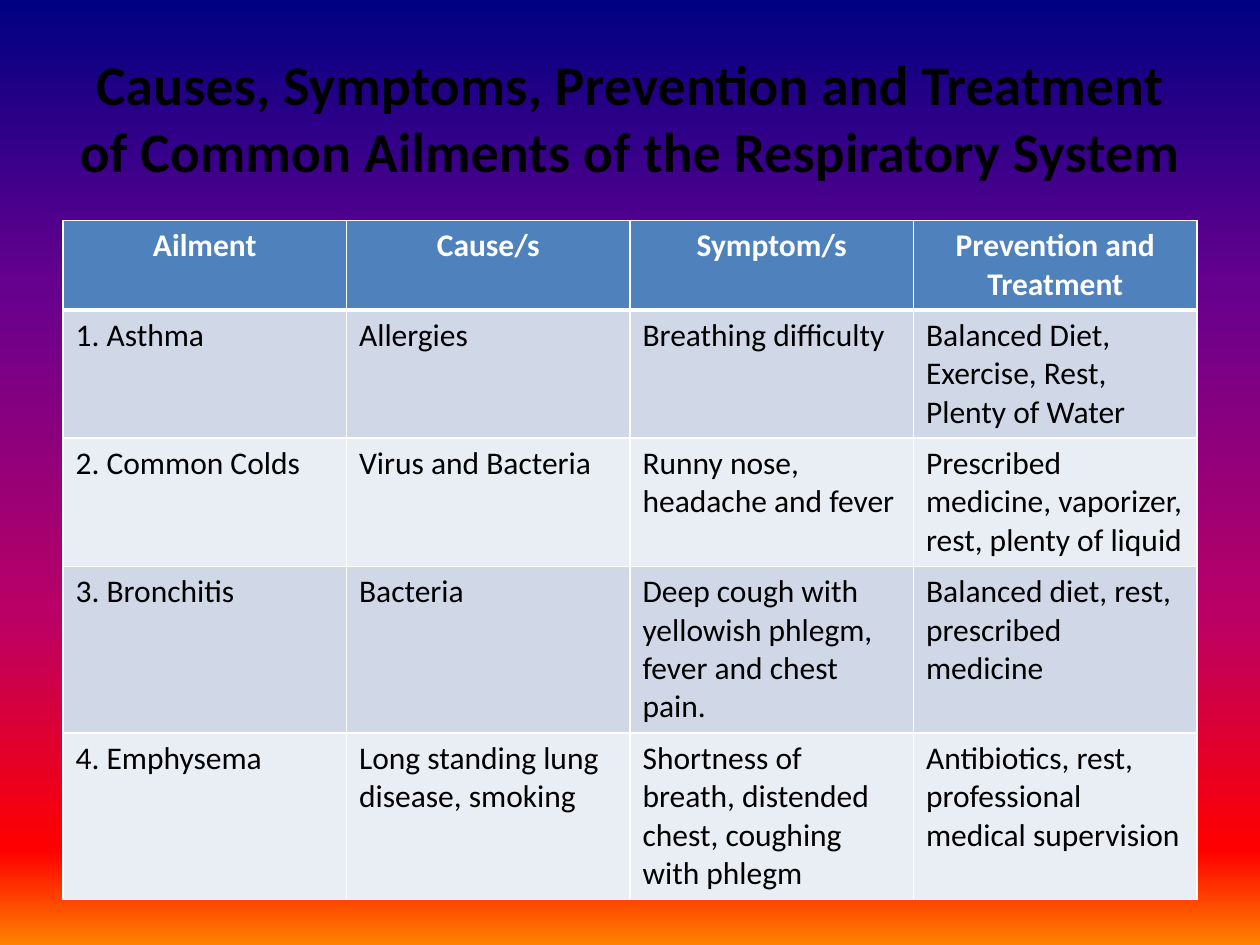
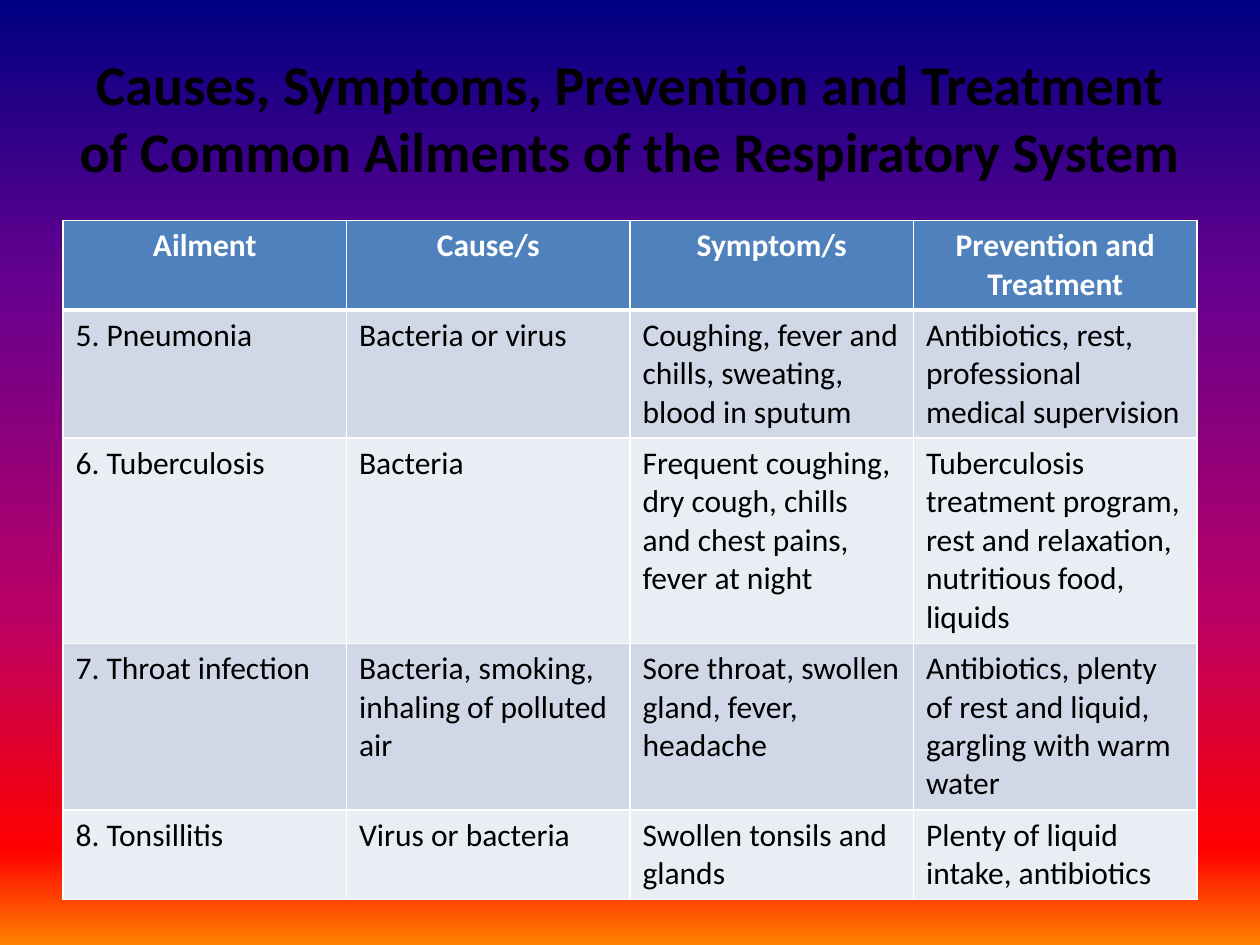
from lxml.etree import SubElement as Sub
from pptx import Presentation
from pptx.dml.color import RGBColor as Rgb
from pptx.enum.text import MSO_ANCHOR as Anchor, PP_ALIGN as Align
from pptx.oxml.ns import qn
from pptx.util import Pt

TITLE = ("Causes, Symptoms, Prevention and Treatment "
         "of Common Ailments of the Respiratory System")
HEADS = ("Ailment", "Cause/s", "Symptom/s", "Prevention and Treatment")
PAGES = [
    [
        ("1. Asthma", "Allergies", "Breathing difficulty",
         "Balanced Diet, Exercise, Rest, Plenty of Water"),
        ("2. Common Colds", "Virus and Bacteria",
         "Runny nose, headache and fever",
         "Prescribed medicine, vaporizer, rest, plenty of liquid"),
        ("3. Bronchitis", "Bacteria",
         "Deep cough with yellowish phlegm, fever and chest pain.",
         "Balanced diet, rest, prescribed medicine"),
        ("4. Emphysema", "Long standing lung disease, smoking",
         "Shortness of breath, distended chest, coughing with phlegm",
         "Antibiotics, rest, professional medical supervision"),
    ],
    [
        ("5. Pneumonia", "Bacteria or virus",
         "Coughing, fever and chills, sweating, blood in sputum",
         "Antibiotics, rest, professional medical supervision"),
        ("6. Tuberculosis", "Bacteria",
         "Frequent coughing, dry cough, chills and chest pains, fever at night",
         "Tuberculosis treatment program, rest and relaxation, "
         "nutritious food, liquids"),
        ("7. Throat infection", "Bacteria, smoking, inhaling of polluted air",
         "Sore throat, swollen gland, fever, headache",
         "Antibiotics, plenty of rest and liquid, gargling with warm water"),
        ("8. Tonsillitis", "Virus or bacteria", "Swollen tonsils and glands",
         "Plenty of liquid intake, antibiotics"),
    ],
]
LINES = [(2, 3, 3, 4, 4), (2, 3, 5, 4, 2)]

HUES = {"text": "000000", "edge": "FFFFFF", "head": "4F81BD",
        "odd": "D0D8E8", "even": "E9EDF4"}
SKY = [(0, "000082"), (30, "66008F"), (65, "BA0066"),
       (90, "FF0000"), (100, "FF8200")]
FONT = "Calibri"
LEFT, WIDTH = 36, 648
TOP, LINE, PAD = 126, 22, 7.2


def paint(master):
    fill = master.background.fill
    fill.gradient()
    fill.gradient_angle = 270
    stops = master.element.find(".//" + qn("a:gsLst"))
    stops.clear()
    for pos, hue in SKY:
        stop = Sub(stops, qn("a:gs"), pos=str(pos * 1000))
        Sub(stop, qn("a:srgbClr"), val=hue)


def style(para, size, hue, bold, align):
    para.alignment = align
    font = para.font
    font.name, font.size, font.bold = FONT, Pt(size), bold
    font.color.rgb = Rgb.from_string(HUES[hue])


def edge(cell, side, width):
    line = Sub(cell._tc.get_or_add_tcPr(), qn("a:ln" + side), w=str(Pt(width)))
    fill = Sub(line, qn("a:solidFill"))
    Sub(fill, qn("a:srgbClr"), val=HUES["edge"])


def add_title(slide):
    title = slide.shapes.title
    title.left, title.top = Pt(LEFT), Pt(21.6)
    title.width, title.height = Pt(WIDTH), Pt(90)
    frame = title.text_frame
    frame.text = TITLE
    frame.vertical_anchor = Anchor.MIDDLE
    style(frame.paragraphs[0], 32, "text", True, Align.CENTER)


def add_grid(slide, rows, lines):
    highs = [n * LINE + PAD for n in lines]
    grid = slide.shapes.add_table(
        len(rows), len(HEADS), Pt(LEFT), Pt(TOP), Pt(WIDTH), Pt(sum(highs))).table
    for r, (row, high) in enumerate(zip(rows, highs)):
        grid.rows[r].height = Pt(high)
        head = r == 0
        band = "head" if head else "odd" if r % 2 else "even"
        for c, text in enumerate(row):
            cell = grid.cell(r, c)
            for side in "LRTB":
                thick = (head and side == "B") or (r == 1 and side == "T")
                edge(cell, side, 3 if thick else 1)
            cell.fill.solid()
            cell.fill.fore_color.rgb = Rgb.from_string(HUES[band])
            cell.text = text
            style(cell.text_frame.paragraphs[0], 18, "edge" if head else "text",
                  head, Align.CENTER if head else Align.LEFT)


def main():
    deck = Presentation()
    deck.slide_width, deck.slide_height = Pt(720), Pt(540)
    paint(deck.slide_master)
    for rows, lines in zip(PAGES, LINES):
        slide = deck.slides.add_slide(deck.slide_layouts[5])
        add_title(slide)
        add_grid(slide, [HEADS, *rows], lines)
    deck.save("out.pptx")


if __name__ == "__main__":
    main()
